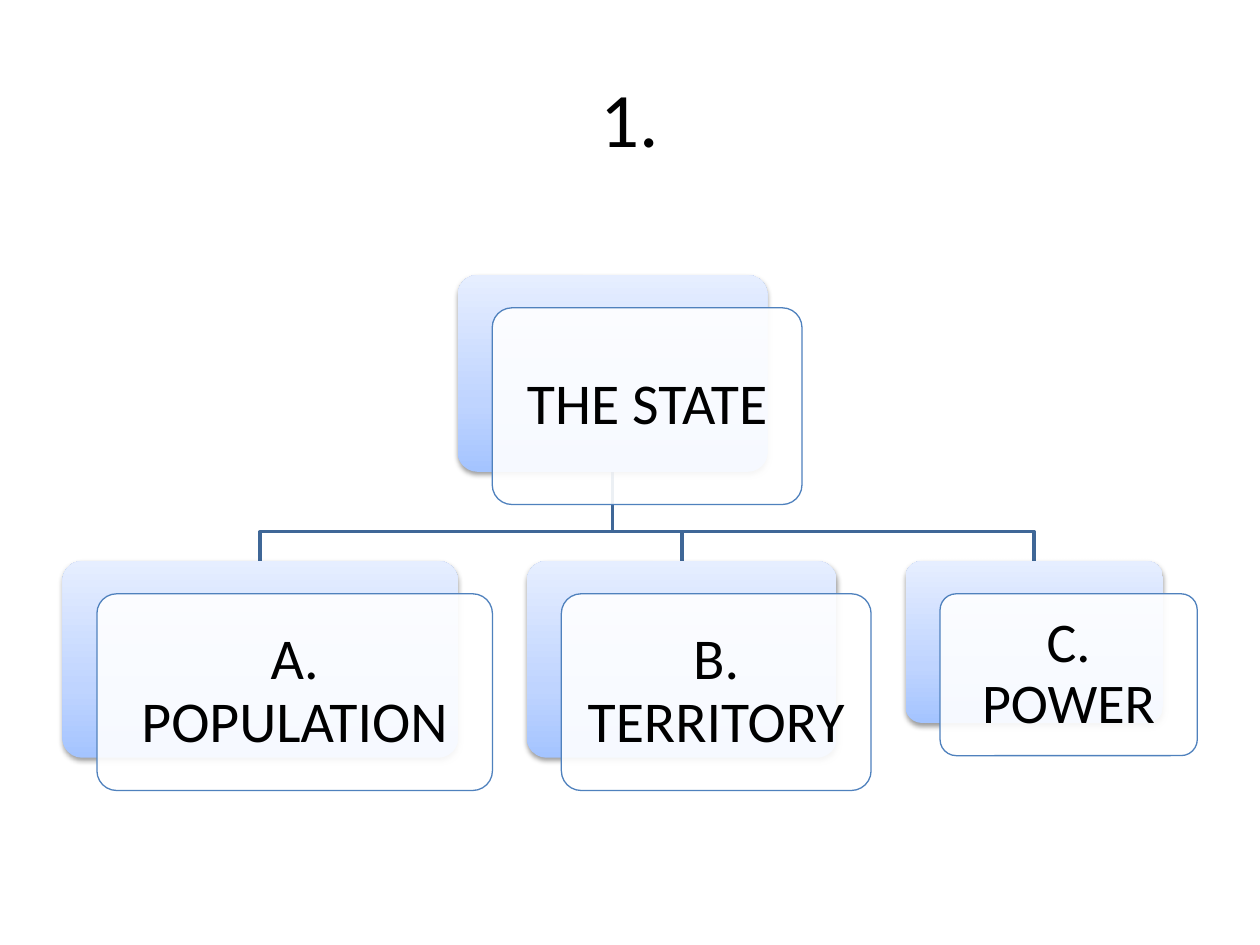
from copy import deepcopy
from lxml import etree
from pptx import Presentation
from pptx.dml.color import RGBColor
from pptx.enum.shapes import MSO_SHAPE
from pptx.enum.text import MSO_ANCHOR, PP_ALIGN
from pptx.oxml.ns import qn
from pptx.util import Pt

ROUND = MSO_SHAPE.ROUNDED_RECTANGLE
MIDDLE = MSO_ANCHOR.MIDDLE
CENTER = PP_ALIGN.CENTER

TITLE = "1."
# text, width, height, type size
ROOT = ("THE STATE", 177, 112.4, 33)
PARTS = [
    ("A. POPULATION", 226, 112.4, 33),
    ("B. TERRITORY", 177, 112.4, 33),
    ("C. POWER", 147, 92.5, 32),
]

THEME = {
    "font": "Calibri", "title": 44, "ink": "000000",
    "link": "3F6797", "edge": "4F81BD", "card": "FFFFFF",
    "fade": [(0, "A4C4FF"), (0.35, "BFD4FF"), (1, "E6EEFF")],
}
LEFT, ROOT_TOP, ROW_TOP, BEND = 35.7, 157.2, 320.6, 303.8
STEP_X, STEP_Y = 19.7, 18.7
GAP = 2 * STEP_X


def color(name):
    return RGBColor.from_string(THEME[name])


def write(shape, text, size, inset):
    frame = shape.text_frame
    frame.word_wrap = True
    frame.vertical_anchor = MIDDLE
    frame.margin_left = frame.margin_right = Pt(inset)
    frame.margin_top = frame.margin_bottom = Pt(inset)
    para = frame.paragraphs[0]
    para.text = text
    para.alignment = CENTER
    para.font.name = THEME["font"]
    para.font.size = Pt(size)
    para.font.color.rgb = color("ink")
    return para


def add_round(slide, x, y, w, h):
    shape = slide.shapes.add_shape(ROUND, Pt(x), Pt(y), Pt(w), Pt(h))
    shape.adjustments[0] = 0.1
    shape.shadow.inherit = False
    return shape


def add_fade(shape):
    """Fill with three colours, the first at the bottom."""
    shape.fill.gradient()
    shape.fill.gradient_angle = 90
    stops = shape._element.spPr.find(".//" + qn("a:gsLst"))
    stops.insert(1, deepcopy(stops[0]))
    for stop, (place, tone) in zip(shape.fill.gradient_stops, THEME["fade"]):
        stop.position = place
        stop.color.rgb = RGBColor.from_string(tone)


def add_alpha(node, share):
    etree.SubElement(node, qn("a:alpha"), val=str(share * 1000))


def add_shadow(shape):
    effects = shape._element.spPr.find(qn("a:effectLst"))
    outer = etree.SubElement(
        effects, qn("a:outerShdw"), blurRad=str(Pt(3.1)), dist=str(Pt(1.6)),
        dir="5400000", rotWithShape="0")
    add_alpha(etree.SubElement(outer, qn("a:srgbClr"), val=THEME["ink"]), 38)


def add_node(slide, x, y, node):
    """Draw a shaded card with a clear text card set off in front."""
    text, w, h, size = node
    back = add_round(slide, x, y, w, h)
    add_fade(back)
    back.line.fill.background()
    add_shadow(back)

    front = add_round(slide, x + STEP_X, y + STEP_Y, w, h)
    front.fill.solid()
    front.fill.fore_color.rgb = color("card")
    add_alpha(front._element.spPr.find(".//" + qn("a:srgbClr")), 90)
    front.line.color.rgb = color("edge")
    front.line.width = Pt(0.75)
    write(front, text, size, 7).line_spacing = 0.9


def add_link(slide, start, end):
    (x1, y1), (x2, y2) = start, end
    path = slide.shapes.build_freeform(Pt(x1), Pt(y1))
    bends = [(x1, BEND), (x2, BEND), (x2, y2)]
    path.add_line_segments([(Pt(x), Pt(y)) for x, y in bends], close=False)
    link = path.convert_to_shape()
    link.shadow.inherit = False
    link.fill.background()
    link.line.color.rgb = color("link")
    link.line.width = Pt(2)


def main():
    deck = Presentation()
    deck.slide_width, deck.slide_height = Pt(720), Pt(540)
    slide = deck.slides.add_slide(deck.slide_layouts[6])
    title = slide.shapes.add_textbox(Pt(36), Pt(21.6), Pt(648), Pt(90))
    write(title, TITLE, THEME["title"], 4)

    spots, x = [], LEFT
    for part in PARTS:
        spots.append(x)
        x += part[1] + GAP
    mid = (LEFT + x - GAP) / 2

    base = (mid, ROOT_TOP + ROOT[2])
    for x, part in reversed(list(zip(spots, PARTS))):
        add_link(slide, base, (x + part[1] / 2, ROW_TOP))
    add_node(slide, mid - ROOT[1] / 2, ROOT_TOP, ROOT)
    for x, part in zip(spots, PARTS):
        add_node(slide, x, ROW_TOP, part)
    deck.save("out.pptx")


if __name__ == "__main__":
    main()
